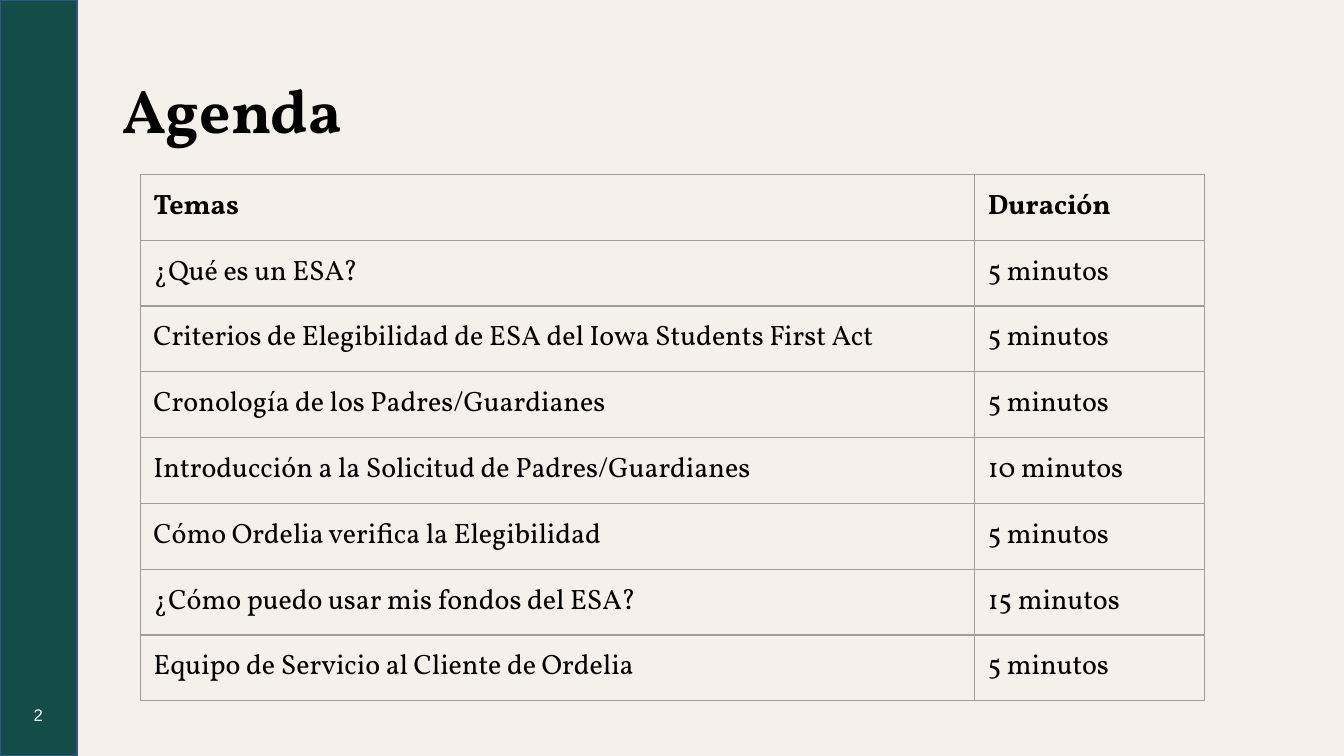
from lxml.etree import SubElement
from pptx import Presentation
from pptx.dml.color import RGBColor
from pptx.enum.shapes import MSO_SHAPE
from pptx.enum.text import MSO_ANCHOR, PP_ALIGN
from pptx.oxml.ns import qn
from pptx.util import Cm, Pt

AGENDA = [
    ("Temas", "Duración"),
    ("¿Qué es un ESA?", "5 minutos"),
    ("Criterios de Elegibilidad de ESA del Iowa Students First Act", "5 minutos"),
    ("Cronología de los Padres/Guardianes", "5 minutos"),
    ("Introducción a la Solicitud de Padres/Guardianes", "10 minutos"),
    ("Cómo Ordelia verifica la Elegibilidad", "5 minutos"),
    ("¿Cómo puedo usar mis fondos del ESA?", "15 minutos"),
    ("Equipo de Servicio al Cliente de Ordelia", "5 minutos"),
]

CREAM = RGBColor(0xF3, 0xF1, 0xEA)
GREEN = RGBColor(0x14, 0x4C, 0x48)
BLUE = RGBColor(0x31, 0x53, 0x8F)
GREY = RGBColor(0x9E, 0x9E, 0x9E)
BLACK = RGBColor(0, 0, 0)
WHITE = RGBColor(0xFF, 0xFF, 0xFF)

WIDTH, HEIGHT = Cm(25.4), Cm(14.29)
COLUMN_WIDTHS = [Cm(15.77), Cm(4.34)]
TABLE_LEFT, TABLE_TOP = Cm(2.65), Cm(3.3)
TABLE_HEIGHT = Cm(9.95)
ROW_HEIGHT = TABLE_HEIGHT // len(AGENDA)
BORDER_WIDTH = Pt(0.75)

TEXT_BOXES = [
    {
        "text": "Agenda",
        "at": (Cm(2.13), Cm(0.76), Cm(21.9), Cm(2.77)),
        "font": {"name": "Vollkorn", "size": Pt(33), "bold": True},
        "color": BLACK,
        "paragraph": {"line_spacing": 0.9},
    },
    {
        "text": "2",
        "at": (Cm(0.18), Cm(13.13), Cm(1.09), Cm(0.76)),
        "font": {"name": "Arial", "size": Pt(9)},
        "color": WHITE,
        "paragraph": {"alignment": PP_ALIGN.CENTER},
    },
]
BOX_FORMAT = {
    "word_wrap": True,
    "vertical_anchor": MSO_ANCHOR.MIDDLE,
    "margin_left": Cm(0.18),
    "margin_right": Cm(0.18),
    "margin_top": Cm(0.1),
    "margin_bottom": Cm(0.1),
}
CELL_FORMAT = {
    f"margin_{side}": Cm(0.25) for side in ("left", "right", "top", "bottom")
}


def apply_format(target, values):
    for name, value in values.items():
        setattr(target, name, value)


def write_text(paragraph, text, font, color):
    run = paragraph.add_run()
    run.text = text
    apply_format(run.font, font)
    run.font.color.rgb = color


def add_text_box(slide, box):
    frame = slide.shapes.add_textbox(*box["at"]).text_frame
    apply_format(frame, BOX_FORMAT)
    paragraph = frame.paragraphs[0]
    apply_format(paragraph, box["paragraph"])
    write_text(paragraph, box["text"], box["font"], box["color"])


def add_borders(cell):
    properties = cell._tc.get_or_add_tcPr()
    for position, side in enumerate(("lnL", "lnR", "lnT", "lnB")):
        line = SubElement(properties, qn(f"a:{side}"), w=str(BORDER_WIDTH))
        fill = SubElement(line, qn("a:solidFill"))
        SubElement(fill, qn("a:srgbClr"), val=str(GREY))
        properties.insert(position, line)


def add_agenda_table(slide):
    table = slide.shapes.add_table(
        len(AGENDA), len(COLUMN_WIDTHS), TABLE_LEFT, TABLE_TOP,
        sum(COLUMN_WIDTHS), TABLE_HEIGHT,
    ).table
    apply_format(table, {"first_row": False, "horz_banding": False})
    for column, width in zip(table.columns, COLUMN_WIDTHS):
        column.width = width
    for row_index, texts in enumerate(AGENDA):
        table.rows[row_index].height = ROW_HEIGHT
        font = {"name": "Vollkorn", "size": Pt(15), "bold": row_index == 0}
        for column_index, text in enumerate(texts):
            cell = table.cell(row_index, column_index)
            apply_format(cell, CELL_FORMAT)
            cell.fill.background()
            add_borders(cell)
            write_text(cell.text_frame.paragraphs[0], text, font, BLACK)


def main():
    presentation = Presentation()
    apply_format(presentation, {"slide_width": WIDTH, "slide_height": HEIGHT})
    slide = presentation.slides.add_slide(presentation.slide_layouts[6])
    slide.background.fill.solid()
    slide.background.fill.fore_color.rgb = CREAM

    sidebar = slide.shapes.add_shape(MSO_SHAPE.RECTANGLE, 0, 0, Cm(1.46), HEIGHT)
    sidebar.shadow.inherit = False
    sidebar.fill.solid()
    sidebar.fill.fore_color.rgb = GREEN
    sidebar.line.color.rgb = BLUE
    sidebar.line.width = Pt(1)

    for box in TEXT_BOXES:
        add_text_box(slide, box)
    add_agenda_table(slide)
    presentation.save("out.pptx")


if __name__ == "__main__":
    main()
